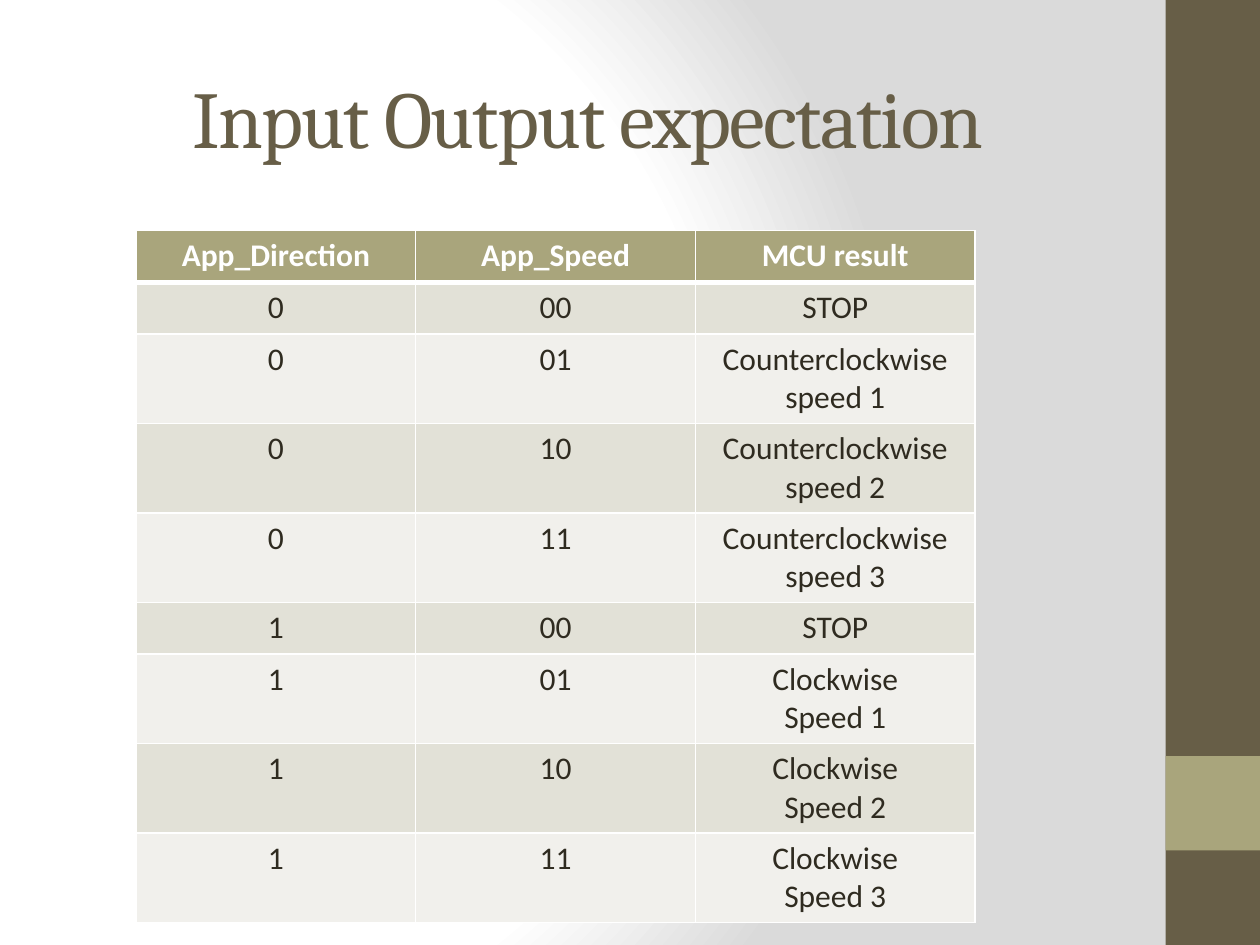
"""Build a slide with the table of expected outputs for each motor input."""
import pptx
import pptx.dml.color
import pptx.enum.text
import pptx.oxml
import pptx.oxml.ns
import pptx.util

Inches = pptx.util.Inches
Pt = pptx.util.Pt
RGBColor = pptx.dml.color.RGBColor
CENTER = pptx.enum.text.PP_ALIGN.CENTER
MIDDLE = pptx.enum.text.MSO_ANCHOR.MIDDLE
BROWN = RGBColor(0x67, 0x5E, 0x47)
OLIVE = RGBColor(0xA9, 0xA5, 0x7C)
INK = RGBColor(0x2F, 0x2B, 0x20)
WHITE = RGBColor(0xFF, 0xFF, 0xFF)
SILVER = RGBColor(0xDA, 0xDA, 0xDA)
BANDS = [RGBColor(0xE2, 0xE1, 0xD7), RGBColor(0xF1, 0xF0, 0xEC)]
SPACE = pptx.oxml.ns.nsdecls("a")

ROWS = [("App_Direction", "App_Speed", "MCU result")]
for way, turn in enumerate(("Counterclockwise speed", "Clockwise\nSpeed")):
    for speed in range(4):
        result = f"{turn} {speed}" if speed else "STOP"
        ROWS.append((str(way), f"{speed:02b}", result))

deck = pptx.Presentation()
deck.slide_width, deck.slide_height = Inches(10), Inches(7.5)
slide = deck.slides.add_slide(deck.slide_layouts[5])

back = slide.background.fill
back.gradient()
grad = back._fill._gradFill
for part in list(grad):
    grad.remove(part)
stops = "".join(
    f'<a:gs pos="{place * 1000}"><a:srgbClr val="{color}"/></a:gs>'
    for place, color in ((0, WHITE), (75, WHITE), (100, SILVER))
)
grad.append(pptx.oxml.parse_xml(f"<a:gsLst {SPACE}>{stops}</a:gsLst>"))
grad.append(pptx.oxml.parse_xml(
    f'<a:path {SPACE} path="circle">'
    '<a:fillToRect l="20000" t="50000" r="100000" b="50000"/></a:path>'
))

for top, height, color in ((0, 7.5, BROWN), (6, 0.75, OLIVE)):
    bar = slide.shapes.add_shape(
        pptx.enum.shapes.MSO_SHAPE.RECTANGLE,
        Inches(9.25), Inches(top), Inches(0.75), Inches(height),
    )
    bar.shadow.inherit = False
    bar.fill.solid()
    bar.fill.fore_color.rgb = color
    bar.line.fill.background()

title = slide.shapes.title
title.left, title.top = Inches(0.5), Inches(0.3)
title.width, title.height = Inches(8.33), Inches(1.25)
frame = title.text_frame
frame.text = "Input Output expectation"
frame.auto_size = pptx.enum.text.MSO_AUTO_SIZE.NONE
frame.vertical_anchor = MIDDLE
head = frame.paragraphs[0]
head.alignment = CENTER
head.font.name = "Cambria"
head.font.size = Pt(46)
head.font.color.rgb = BROWN
head.runs[0]._r.get_or_add_rPr().set("spc", "-100")

holder = slide.shapes.add_table(
    len(ROWS), 3, Inches(1.08), Inches(1.83), Inches(6.67), Inches(5.42)
)
table = holder.table
for column in table.columns:
    column.width = Inches(2.22)
for y, row in enumerate(ROWS):
    table.rows[y].height = Inches(0.41)
    for x, text in enumerate(row):
        cell = table.cell(y, x)
        cell.text = text
        cell.fill.solid()
        cell.fill.fore_color.rgb = BANDS[(y - 1) % 2] if y else OLIVE
        for line in cell.text_frame.paragraphs:
            line.alignment = CENTER
            line.font.name = "Calibri"
            line.font.size = Pt(18)
            line.font.bold = y == 0
            line.font.color.rgb = INK if y else WHITE
        for spot, side in enumerate("LRTB"):
            thick = (y, side) in ((0, "B"), (1, "T"))
            edge = pptx.oxml.parse_xml(
                f'<a:ln{side} {SPACE} w="{Pt(3 if thick else 1)}"><a:solidFill>'
                f'<a:srgbClr val="{WHITE}"/></a:solidFill></a:ln{side}>'
            )
            cell._tc.get_or_add_tcPr().insert(spot, edge)
holder.height = Inches(5.42)

deck.save("out.pptx")
